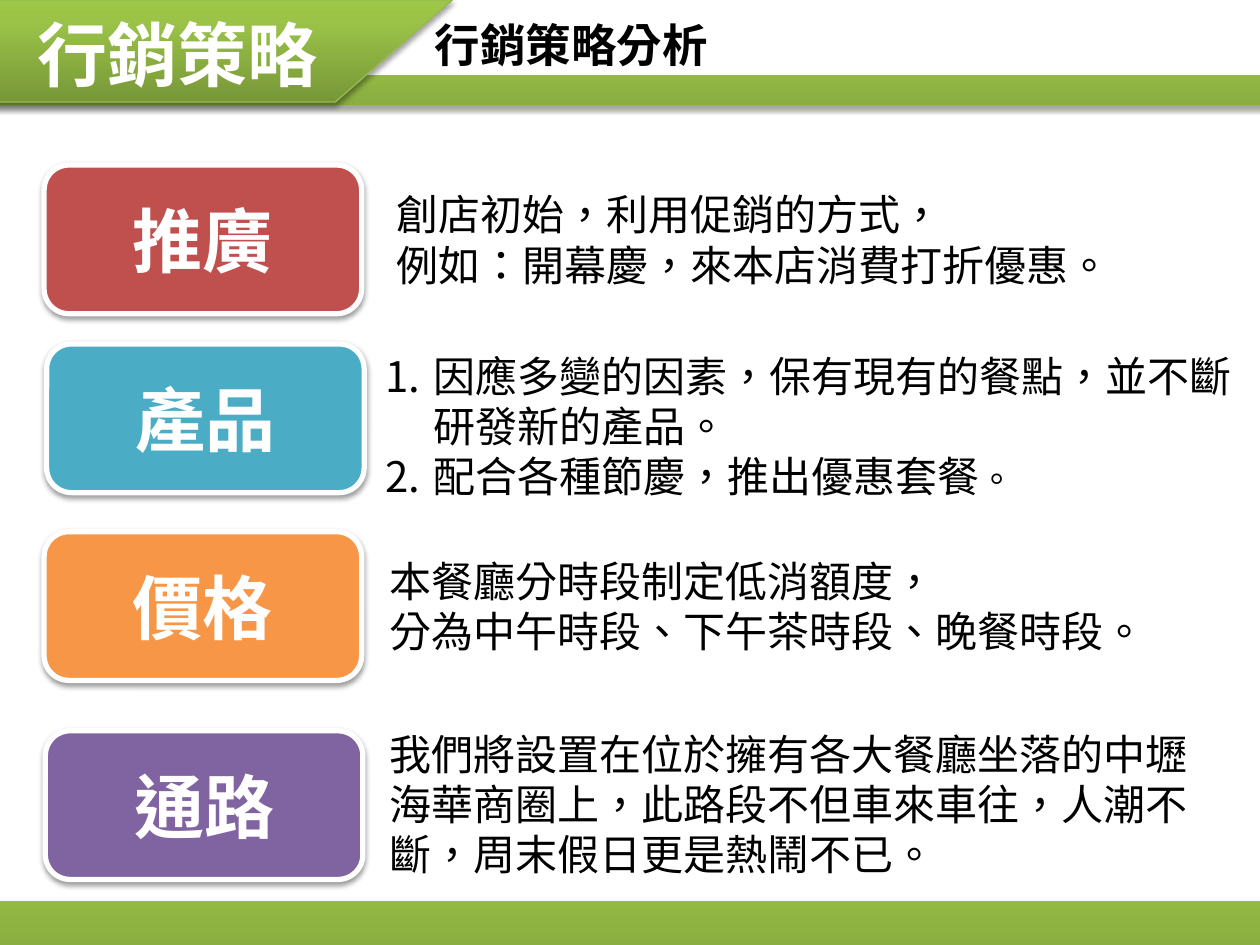
from lxml import etree
from pptx import Presentation
from pptx.dml.color import RGBColor
from pptx.enum import lang, shapes, text
from pptx.oxml import parse_xml
from pptx.oxml.ns import nsdecls
from pptx.util import Inches, Pt

THEME = {
    "black": "000000", "white": "FFFFFF", "green line": "98B955",
    "green": [(0, "779737"), (80, "9BC348"), (100, "9DC746")],
    "font": "Arial", "banner font": "Noto Sans CJK SC",
    "title": 26, "label": 40, "body": 24, "small": 20,
}
BANNER = "行銷策略"
TITLE = "行銷策略分析"
SHAPE = shapes.MSO_SHAPE
DECOR = [  # preset, (left, top, width, height)
    (SHAPE.MATH_MINUS, (-2.57, 0.21, 14.73, 1.02)),
    (SHAPE.FLOWCHART_DATA, (-1.06, 0, 4.65, 0.81)),
    (SHAPE.MATH_MINUS, (-2.44, 6.51, 14.73, 1.69)),
]
CARD_SIZE = (2.52, 1.18)
# Each paragraph is a list of (words, size name) spans.
STRATEGIES = [
    {"label": "推廣", "color": "C0504D", "card": (0.35, 1.31),
     "box": (3.05, 1.45, 6.61, 0.91), "numbered": False,
     "paras": [[("創店初始，利用促銷的方式，", "body")],
               [("例如：開幕慶，來本店消費打折優惠。", "body")]]},
    {"label": "產品", "color": "4BACC6", "card": (0.37, 2.73),
     "box": (2.96, 2.73, 7.04, 1.31), "numbered": True,
     "paras": [[("因應多變的因素，保有現有的餐點，並不斷研發新的產品。", "body")],
               [("配合各種節慶，推出優惠套餐", "body"), ("。", "small")]]},
    {"label": "價格", "color": "F79646", "card": (0.35, 4.22),
     "box": (2.99, 4.36, 6.67, 0.91), "numbered": False,
     "paras": [[("本餐廳分時段制定低消額度，", "body")],
               [("分為中午時段、下午茶時段、晚餐時段。", "body")]]},
    {"label": "通路", "color": "8064A2", "card": (0.36, 5.8),
     "box": (2.99, 5.73, 6.67, 1.31), "numbered": False,
     "paras": [[("我們將設置在位於擁有各大餐廳坐落的中壢海華商圈上，"
                 "此路段不但車來車往，人潮不斷，周末假日更是熱鬧不已。", "body")]]},
]


def rgb(value):
    return RGBColor.from_string(value)


def set_all(target, values):
    for name, value in values.items():
        setattr(target, name, value)


def add_span(para, words, size, color="black", bold=False, font="font"):
    span = para.add_run()
    span.text = words
    set_all(span.font, {"name": THEME[font], "size": Pt(THEME[size]), "bold": bold,
                        "language_id": lang.MSO_LANGUAGE_ID.TRADITIONAL_CHINESE})
    span.font.color.rgb = rgb(THEME[color])


def add_shadow(shape, opacity, distance):
    shape.shadow.inherit = False
    effects = shape._element.spPr.find("{*}effectLst")
    effects.append(parse_xml(
        f'<a:outerShdw {nsdecls("a")} blurRad="{Pt(3.1)}" dist="{Pt(distance)}" '
        f'dir="5400000" rotWithShape="0"><a:srgbClr val="{THEME["black"]}">'
        f'<a:alpha val="{opacity * 1000}"/></a:srgbClr></a:outerShdw>'))


def fill_green(shape):
    """Three-stop gradient, dark at the bottom."""
    shape.fill.gradient()
    shape.fill.gradient_angle = 90
    stops = shape._element.spPr.find("{*}gradFill/{*}gsLst")
    for old in list(stops):
        stops.remove(old)
    for place, color in THEME["green"]:
        stops.append(parse_xml(f'<a:gs {nsdecls("a")} pos="{place * 1000}">'
                               f'<a:srgbClr val="{color}"/></a:gs>'))


def number_para(para):
    props = para._p.get_or_add_pPr()
    props.set("marL", str(Inches(0.38)))
    props.set("indent", str(-Inches(0.38)))
    etree.SubElement(props, props.tag.replace("pPr", "buAutoNum"), type="arabicPeriod")


def add_decor(page, preset, place):
    shape = page.shapes.add_shape(preset, *map(Inches, place))
    fill_green(shape)
    shape.line.color.rgb = rgb(THEME["green line"])
    shape.line.width = Pt(0.75)
    add_shadow(shape, 35, 1.8)


def add_text_box(page, place, wrap=True):
    frame = page.shapes.add_textbox(*map(Inches, place)).text_frame
    set_all(frame, {"word_wrap": wrap, "auto_size": text.MSO_AUTO_SIZE.SHAPE_TO_FIT_TEXT})
    return frame


def add_title(page):
    title = page.shapes.title
    set_all(title, dict(zip(("left", "top", "width", "height"),
                            map(Inches, (3.35, -0.27, 5.85, 1.25)))))
    title.text_frame.vertical_anchor = text.MSO_ANCHOR.MIDDLE
    para = title.text_frame.paragraphs[0]
    para.alignment = text.PP_ALIGN.LEFT
    add_span(para, TITLE, "title", bold=True)


def add_card(page, item):
    card = page.shapes.add_shape(SHAPE.ROUNDED_RECTANGLE,
                                 *map(Inches, item["card"] + CARD_SIZE))
    card.fill.solid()
    card.fill.fore_color.rgb = rgb(item["color"])
    card.line.color.rgb = rgb(THEME["white"])
    card.line.width = Pt(3)
    add_shadow(card, 38, 1.6)
    card.text_frame.vertical_anchor = text.MSO_ANCHOR.MIDDLE
    para = card.text_frame.paragraphs[0]
    para.alignment = text.PP_ALIGN.CENTER
    add_span(para, item["label"], "label", "white", True)


def add_details(page, item):
    frame = add_text_box(page, item["box"])
    for index, spans in enumerate(item["paras"]):
        para = frame.add_paragraph() if index else frame.paragraphs[0]
        if item["numbered"]:
            number_para(para)
        for words, size in spans:
            add_span(para, words, size)


def main():
    deck = Presentation()
    deck.slide_width, deck.slide_height = Inches(10), Inches(7.5)
    page = deck.slides.add_slide(deck.slide_layouts.get_by_name("Title Only"))
    for preset, place in DECOR:
        add_decor(page, preset, place)
    banner = add_text_box(page, (0.2, 0.04, 2.45, 0.77), wrap=False)
    add_span(banner.paragraphs[0], BANNER, "label", "white", True, "banner font")
    add_title(page)
    for item in STRATEGIES:
        add_card(page, item)
        add_details(page, item)
    deck.save("out.pptx")


if __name__ == "__main__":
    main()
